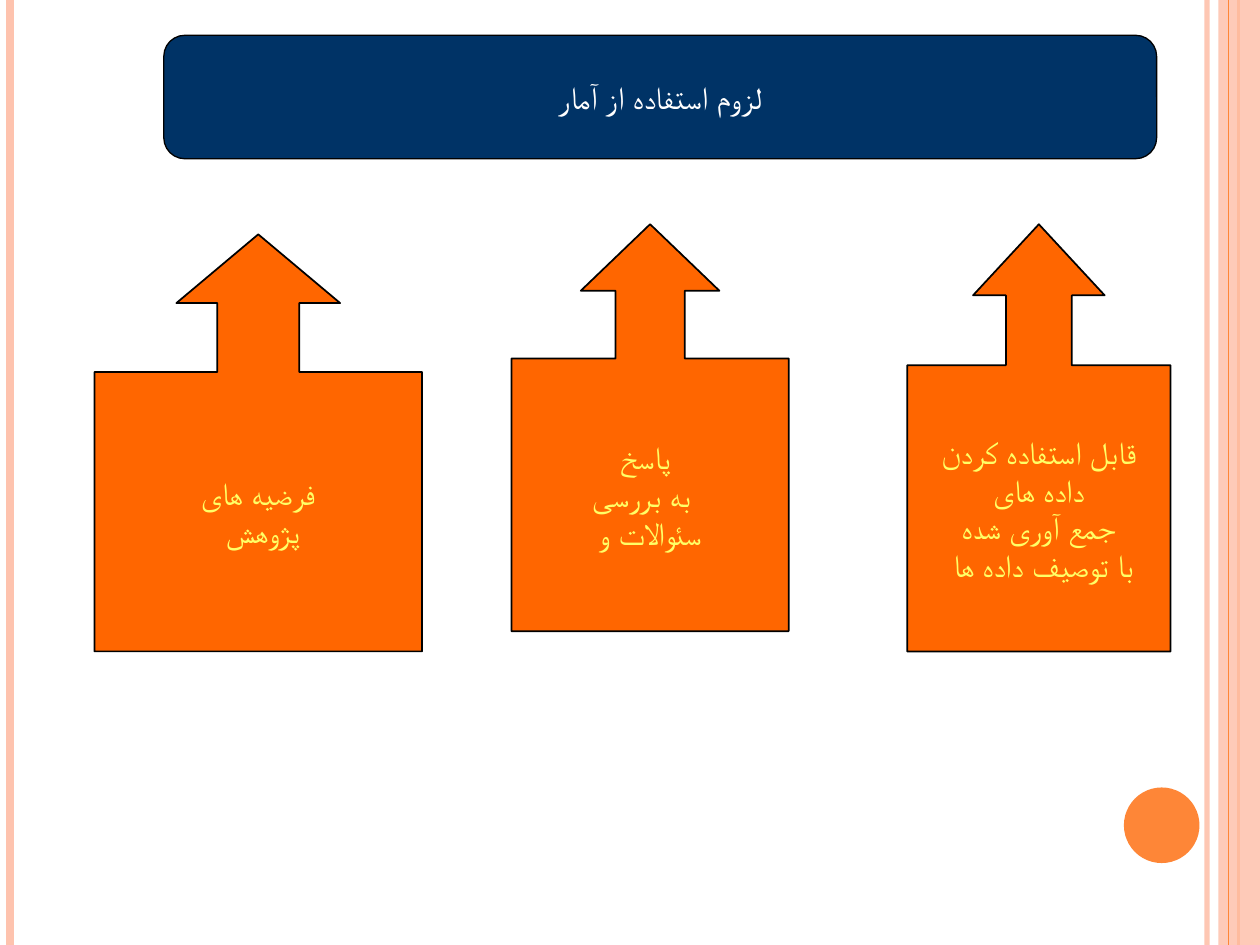
from lxml import etree
from pptx import Presentation
from pptx.dml.color import RGBColor
from pptx.enum.shapes import MSO_CONNECTOR, MSO_SHAPE
from pptx.enum.text import MSO_ANCHOR, PP_ALIGN
from pptx.oxml.ns import qn
from pptx.util import Inches, Pt

STRAIGHT = MSO_CONNECTOR.STRAIGHT
RECTANGLE, OVAL = MSO_SHAPE.RECTANGLE, MSO_SHAPE.OVAL
ROUNDED, CALLOUT = MSO_SHAPE.ROUNDED_RECTANGLE, MSO_SHAPE.UP_ARROW_CALLOUT
MIDDLE, CENTER = MSO_ANCHOR.MIDDLE, PP_ALIGN.CENTER

PEACH = RGBColor(0xFE, 0xC3, 0xAE)
ORANGE = RGBColor(0xFE, 0x86, 0x37)
DEEP_ORANGE = RGBColor(0xFF, 0x66, 0x00)
NAVY = RGBColor(0x00, 0x33, 0x66)
BLACK = RGBColor(0, 0, 0)
WHITE = RGBColor(0xFF, 0xFF, 0xFF)
YELLOW = RGBColor(0xFF, 0xFF, 0x66)

WIDTH, HEIGHT = 10, 7.5

TITLE = ["لزوم استفاده از آمار"]
# place, arrowhead length, lines of text
REASONS = [
    ((7.2, 1.78, 2.09, 3.39), 0.27,
     ["قابل استفاده کردن", " داده های ", "جمع آوری شده", " با توصیف داده ها"]),
    ((4.06, 1.78, 2.2, 3.23), 0.24,
     ["پاسخ ", "به بررسی  ", "سئوالات و"]),
    ((0.75, 1.86, 2.6, 3.31), 0.21,
     ["فرضیه های", " پژوهش"]),
]
# x, colour, line width, opacity in percent
STRIPES_BEHIND = [(9.58, PEACH, 3, 93), (0.08, PEACH, 4.5, 100), (9.83, ORANGE, 1.5, 100)]
STRIPES_FRONT = [(9.75, ORANGE, 0.75, 100)]


def set_opacity(fill, percent):
    color = fill._xPr.find(qn("a:solidFill"))[0]
    etree.SubElement(color, qn("a:alpha"), val=str(percent * 1000))


def add_stripes(page, stripes):
    for x, color, width, opacity in stripes:
        stripe = page.shapes.add_connector(
            STRAIGHT, Inches(x), 0, Inches(x), Inches(HEIGHT))
        stripe.line.color.rgb = color
        stripe.line.width = Pt(width)
        if opacity < 100:
            set_opacity(stripe.line.fill, opacity)
        etree.SubElement(stripe._element.spPr, qn("a:effectLst"))


def add_box(page, kind, place, color, outline=None, adjustments=()):
    box = page.shapes.add_shape(kind, *map(Inches, place))
    box.shadow.inherit = False
    box.fill.solid()
    box.fill.fore_color.rgb = color
    if outline:
        box.line.color.rgb = BLACK
        box.line.width = Pt(outline)
    else:
        box.line.fill.background()
    for index, value in enumerate(adjustments):
        box.adjustments[index] = value
    return box


def write(box, lines, color, right_to_left=False):
    frame = box.text_frame
    frame.word_wrap = False
    frame.vertical_anchor = MIDDLE
    for index, line in enumerate(lines):
        para = frame.add_paragraph() if index else frame.paragraphs[0]
        para.alignment = CENTER
        if right_to_left:
            para._p.get_or_add_pPr().set("rtl", "1")
        span = para.add_run()
        span.text = line
        for name, value in {"size": Pt(18), "name": "Arial"}.items():
            setattr(span.font, name, value)
        span.font.color.rgb = color
        etree.SubElement(span._r.rPr, qn("a:cs"), typeface="Arial")


def main():
    deck = Presentation()
    deck.slide_width, deck.slide_height = Inches(WIDTH), Inches(HEIGHT)
    page = deck.slides.add_slide(deck.slide_layouts[6])

    add_stripes(page, STRIPES_BEHIND)
    band = add_box(page, RECTANGLE, (9.67, 0, WIDTH - 9.67, HEIGHT), PEACH)
    set_opacity(band.fill, 87)
    add_stripes(page, STRIPES_FRONT)
    add_box(page, OVAL, (8.92, 6.25, 0.6, 0.6), ORANGE)

    title = add_box(page, ROUNDED, (1.3, 0.28, 7.88, 0.98), NAVY, 0.75, [0.17])
    write(title, TITLE, WHITE, right_to_left=True)
    for place, head, lines in REASONS:
        callout = add_box(page, CALLOUT, place, DEEP_ORANGE, 1, [0.25, 0.25, head, 0.67])
        write(callout, lines, YELLOW)

    deck.save("out.pptx")


if __name__ == "__main__":
    main()
